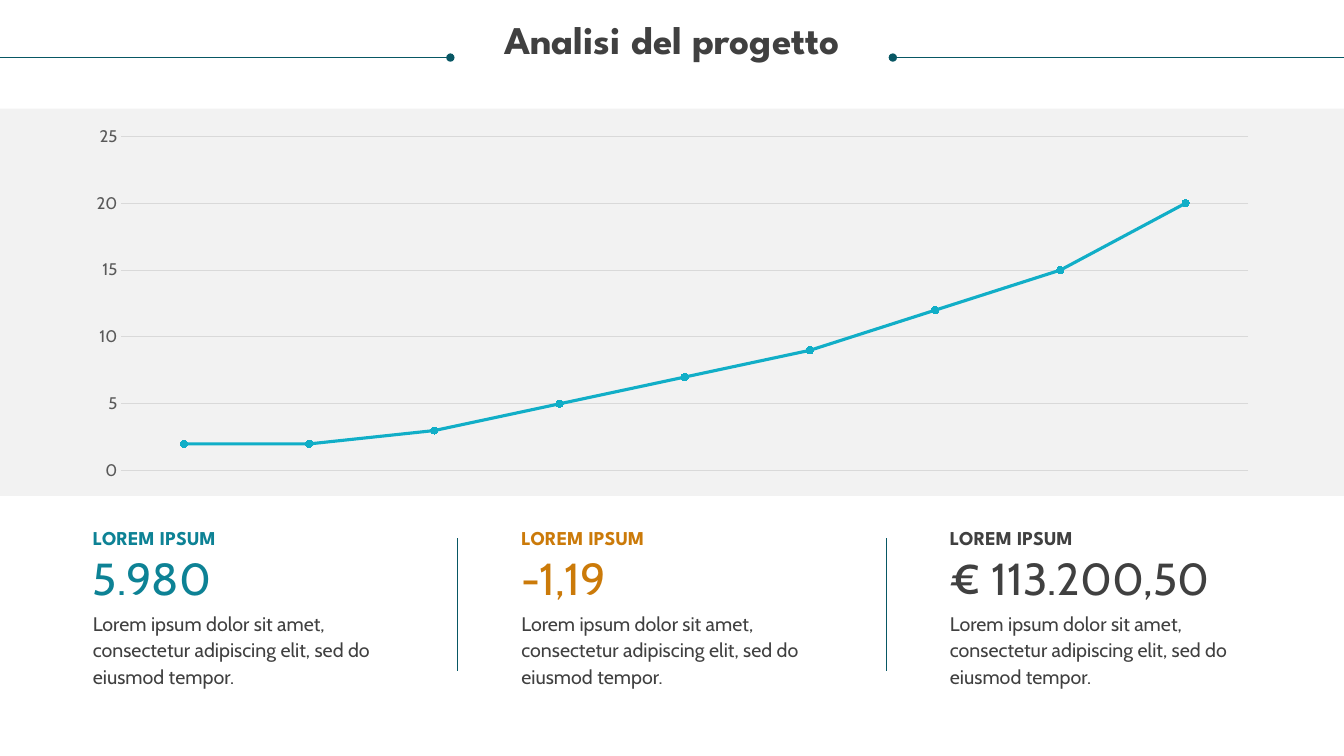
from pptx import Presentation
from pptx.chart.data import CategoryChartData
from pptx.dml.color import RGBColor
from pptx.enum.chart import XL_CHART_TYPE, XL_MARKER_STYLE, XL_TICK_MARK
from pptx.enum.shapes import MSO_CONNECTOR, MSO_SHAPE
from pptx.enum.text import MSO_ANCHOR, MSO_AUTO_SIZE, PP_ALIGN
from pptx.oxml.ns import qn
from pptx.util import Cm, Pt
from lxml import etree

LINE_CHART = XL_CHART_TYPE.LINE_MARKERS
CIRCLE = XL_MARKER_STYLE.CIRCLE
NO_TICK = XL_TICK_MARK.NONE
STRAIGHT = MSO_CONNECTOR.STRAIGHT
RECTANGLE = MSO_SHAPE.RECTANGLE
TOP = MSO_ANCHOR.TOP
GROW = MSO_AUTO_SIZE.SHAPE_TO_FIT_TEXT
CENTER = PP_ALIGN.CENTER

COLORS = {
    "white": "FFFFFF", "band": "F2F2F2", "grid": "D9D9D9",
    "axis": "595959", "text": "404040", "rule": "085764",
    "series": "11AEC7", "teal": "0D8295", "orange": "CB7A09",
}
HEADING_FONT = "League Spartan"
BODY_FONT = "Cabin"

SLIDE_W, SLIDE_H = 33.87, 19.05
COLUMN_LEFT, COLUMN_STEP, COLUMN_W = 2.34, 10.8, 7.62
DIVIDER_OFFSET = 9.19

GROWTH = [2, 2, 3, 5, 7, 9, 12, 15, 20]
LABEL = "LOREM IPSUM"
DESCRIPTION = ("Lorem ipsum dolor sit amet, consectetur adipiscing elit, "
               "sed do eiusmod tempor.")
FIGURES = [("5.980", "teal"), ("-1,19", "orange"), ("€ 113.200,50", "text")]


def rgb(color):
    return RGBColor.from_string(COLORS[color])


def style_font(font, name, size, color, bold=False):
    font.name = name
    font.size = Pt(size)
    font.bold = bold
    font.color.rgb = rgb(color)


def fill_text(shape, text, font_name, size, color, bold=False, spacing=None,
              align=None):
    frame = shape.text_frame
    frame.word_wrap = True
    frame.auto_size = GROW
    frame.vertical_anchor = TOP
    frame.margin_left = frame.margin_right = 0
    frame.margin_top = frame.margin_bottom = 0
    frame.text = text
    paragraph = frame.paragraphs[0]
    paragraph.alignment = align
    paragraph.line_spacing = spacing
    style_font(paragraph.font, font_name, size, color, bold)


def add_title(slide, text):
    title = slide.shapes.title
    title.left, title.top = Cm(0.64), Cm(0.53)
    title.width, title.height = Cm(32.59), Cm(2.16)
    fill_text(title, text, HEADING_FONT, 28, "text", True, 0.9, CENTER)


def add_text(slide, left, top, height, text, *style, **options):
    box = slide.shapes.add_textbox(Cm(left), Cm(top), Cm(COLUMN_W), Cm(height))
    fill_text(box, text, *style, **options)


def add_rule(slide, x1, y1, x2, y2, dot=False):
    rule = slide.shapes.add_connector(STRAIGHT, Cm(x1), Cm(y1), Cm(x2), Cm(y2))
    rule.line.color.rgb = rgb("rule")
    rule.line.width = Pt(0.5)
    properties = rule._element.spPr
    if dot:
        outline = properties.find(qn("a:ln"))
        etree.SubElement(outline, qn("a:headEnd"), type="oval")
    etree.SubElement(properties, qn("a:effectLst"))


def add_band(slide, top, height):
    band = slide.shapes.add_shape(RECTANGLE, 0, Cm(top), Cm(SLIDE_W), Cm(height))
    band.shadow.inherit = False
    band.fill.solid()
    band.fill.fore_color.rgb = rgb("band")
    band.line.fill.background()


def add_growth_chart(slide):
    data = CategoryChartData()
    data.categories = [str(n) for n in range(1, len(GROWTH) + 1)]
    data.add_series("Series 1", GROWTH)
    chart = slide.shapes.add_chart(
        LINE_CHART, Cm(1.83), Cm(3), Cm(30.23), Cm(9.3), data).chart
    chart.has_legend = False
    chart.has_title = False
    chart.font.name = BODY_FONT
    chart.font.size = Pt(10)

    # Axes
    chart.category_axis.visible = False
    scale = chart.value_axis
    scale.minimum_scale, scale.maximum_scale, scale.major_unit = 0, 25, 5
    scale.major_tick_mark = scale.minor_tick_mark = NO_TICK
    scale.format.line.fill.background()
    scale.major_gridlines.format.line.color.rgb = rgb("grid")
    scale.major_gridlines.format.line.width = Pt(0.75)
    style_font(scale.tick_labels.font, BODY_FONT, 12, "axis")

    # Line and markers
    growth = chart.plots[0].series[0]
    growth.smooth = False
    growth.format.line.color.rgb = rgb("series")
    growth.format.line.width = Pt(2.25)
    growth.marker.style = CIRCLE
    growth.marker.size = 5
    growth.marker.format.fill.solid()
    growth.marker.format.fill.fore_color.rgb = rgb("series")
    growth.marker.format.line.color.rgb = rgb("series")
    chart.plots[0].vary_by_categories = False


def add_figure(slide, left, value, color):
    add_text(slide, left, 13.18, 0.69, LABEL, HEADING_FONT, 14, color, True,
             spacing=Pt(19))
    add_text(slide, left, 13.89, 1.37, value, BODY_FONT, 32, color)
    add_text(slide, left, 15.34, 2.03, DESCRIPTION, BODY_FONT, 14, "text",
             spacing=Pt(19))


def main():
    deck = Presentation()
    deck.slide_width, deck.slide_height = Cm(SLIDE_W), Cm(SLIDE_H)
    slide = deck.slides.add_slide(deck.slide_layouts[5])
    slide.background.fill.solid()
    slide.background.fill.fore_color.rgb = rgb("white")

    # Title between two dotted rules
    add_title(slide, "Analisi del progetto")
    for inner, edge in ((11.35, 0), (22.5, SLIDE_W)):
        add_rule(slide, inner, 1.45, edge, 1.45, dot=True)

    # Chart on its grey band
    add_band(slide, 2.74, 9.76)
    add_growth_chart(slide)

    # Key figures with dividers between them
    for index, (value, color) in enumerate(FIGURES):
        left = COLUMN_LEFT + index * COLUMN_STEP
        add_figure(slide, left, value, color)
        if index < len(FIGURES) - 1:
            divider = left + DIVIDER_OFFSET
            add_rule(slide, divider, 13.56, divider, 16.92)

    deck.save("out.pptx")


if __name__ == "__main__":
    main()
